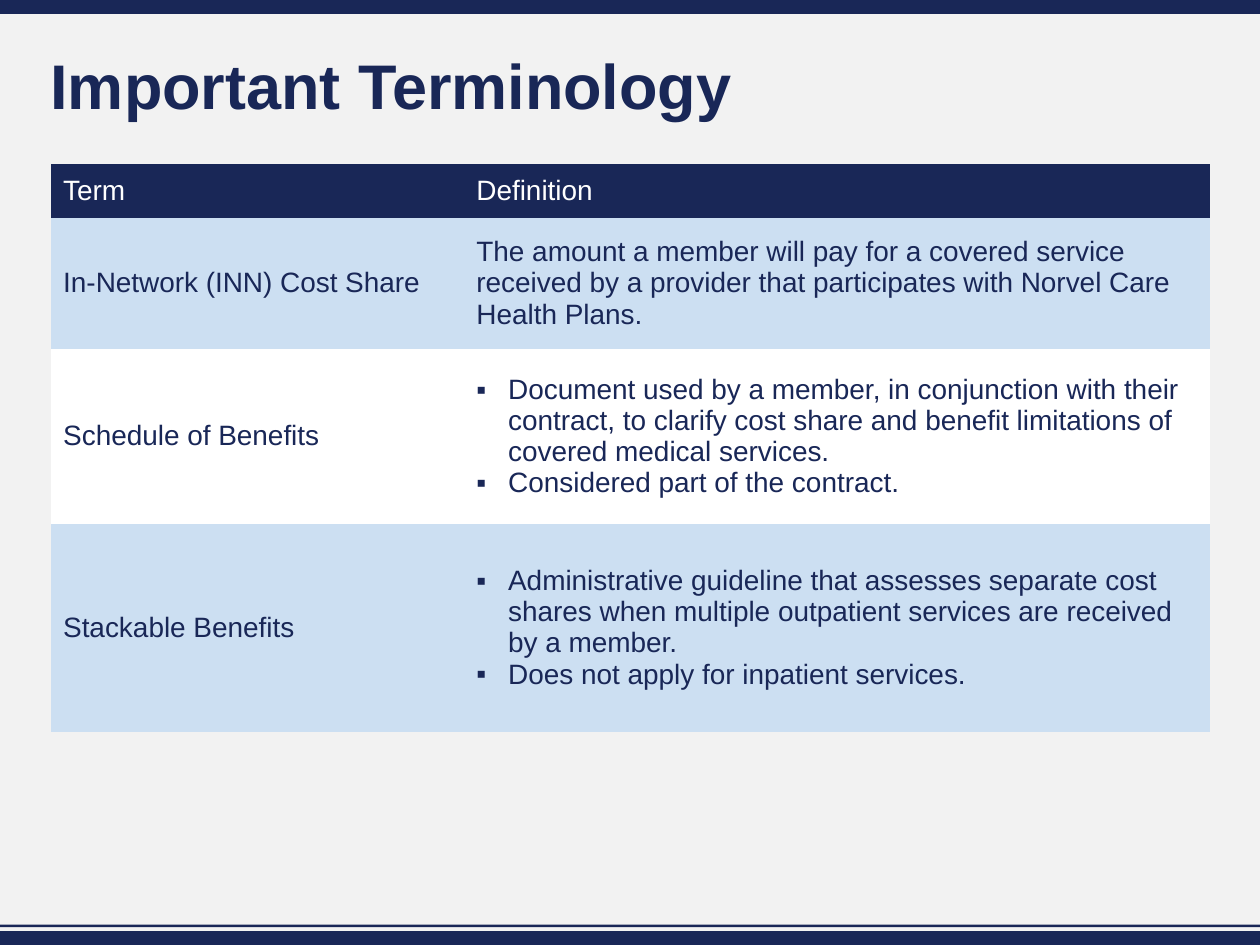
"""Build the Important Terminology slide with its table of terms."""
from lxml.etree import SubElement
from pptx import Presentation
from pptx.dml.color import RGBColor
from pptx.enum.shapes import MSO_SHAPE as Shape
from pptx.enum.text import MSO_ANCHOR as Anchor
from pptx.oxml.ns import qn
from pptx.util import Cm, Pt

WIDTH, HEIGHT, MARGIN = 25.4, 19.05, 1.02
NAVY, PALE_BLUE, WHITE, GREY = "192757", "CCDFF2", "FFFFFF", "F2F2F2"
FONT = "Arial"
NO_GRID_STYLE = "{2D5ABB26-0587-4C30-8999-92F81FD0307C}"

HEADING = "Important Terminology"
BANDS = [(0, 0.28), (18.77, 0.28), (18.64, 0.05)]
COLUMN_WIDTHS = [8.33, 15.04]
ROWS = [
    (1.09, "Term", ["Definition"]),
    (2.64, "In-Network (INN) Cost Share", [
        "The amount a member will pay for a covered service received by a "
        "provider that participates with Norvel Care Health Plans."]),
    (3.53, "Schedule of Benefits", [
        "Document used by a member, in conjunction with their contract, to "
        "clarify cost share and benefit limitations of covered medical services.",
        "Considered part of the contract."]),
    (4.19, "Stackable Benefits", [
        "Administrative guideline that assesses separate cost shares when "
        "multiple outpatient services are received by a member.",
        "Does not apply for inpatient services."]),
]


def paint(fill, color):
    fill.solid()
    fill.fore_color.rgb = RGBColor.from_string(color)


def add_run(paragraph, text, size, color, bold=False):
    run = paragraph.add_run()
    run.text = text
    run.font.name, run.font.size, run.font.bold = FONT, Pt(size), bold
    run.font.color.rgb = RGBColor.from_string(color)


def add_bullet(paragraph):
    properties = paragraph._p.get_or_add_pPr()
    properties.set("marL", str(Cm(0.64)))
    properties.set("indent", str(-Cm(0.64)))
    SubElement(properties, qn("a:buFont"), typeface=FONT)
    SubElement(properties, qn("a:buChar"), char="▪")


def fill_cell(cell, lines, background, color):
    paint(cell.fill, background)
    cell.vertical_anchor = Anchor.MIDDLE
    frame = cell.text_frame
    for index, line in enumerate(lines):
        paragraph = frame.add_paragraph() if index else frame.paragraphs[0]
        if len(lines) > 1:
            add_bullet(paragraph)
        add_run(paragraph, line, 16, color)


def add_bands(slide):
    for top, height in BANDS:
        band = slide.shapes.add_shape(
            Shape.RECTANGLE, 0, Cm(top), Cm(WIDTH), Cm(height))
        band.shadow.inherit = False
        paint(band.fill, NAVY)
        band.line.fill.background()


def add_heading(slide):
    heading = slide.shapes.add_textbox(
        Cm(MARGIN), Cm(1.02), Cm(WIDTH - 2 * MARGIN), Cm(1.57)).text_frame
    heading.word_wrap = True
    heading.vertical_anchor = Anchor.MIDDLE
    heading.margin_left = heading.margin_right = 0
    heading.margin_top = heading.margin_bottom = 0
    heading.paragraphs[0].line_spacing = 0.9
    add_run(heading.paragraphs[0], HEADING, 36, NAVY, bold=True)


def add_terms(slide):
    holder = slide.shapes.add_table(
        len(ROWS), len(COLUMN_WIDTHS), Cm(MARGIN), Cm(3.3),
        Cm(sum(COLUMN_WIDTHS)), Cm(sum(row[0] for row in ROWS)))
    for style in holder.element.iter(qn("a:tableStyleId")):
        style.text = NO_GRID_STYLE
    terms = holder.table
    terms.horz_banding = False
    for column, width in zip(terms.columns, COLUMN_WIDTHS):
        column.width = Cm(width)
    for index, (height, term, definition) in enumerate(ROWS):
        terms.rows[index].height = Cm(height)
        background = PALE_BLUE if index % 2 else WHITE
        colors = (background, NAVY) if index else (NAVY, WHITE)
        fill_cell(terms.cell(index, 0), [term], *colors)
        fill_cell(terms.cell(index, 1), definition, *colors)


def main():
    deck = Presentation()
    deck.slide_width, deck.slide_height = Cm(WIDTH), Cm(HEIGHT)
    slide = deck.slides.add_slide(deck.slide_layouts[6])
    paint(slide.background.fill, GREY)
    add_bands(slide)
    add_terms(slide)
    add_heading(slide)
    deck.save("out.pptx")


if __name__ == "__main__":
    main()
